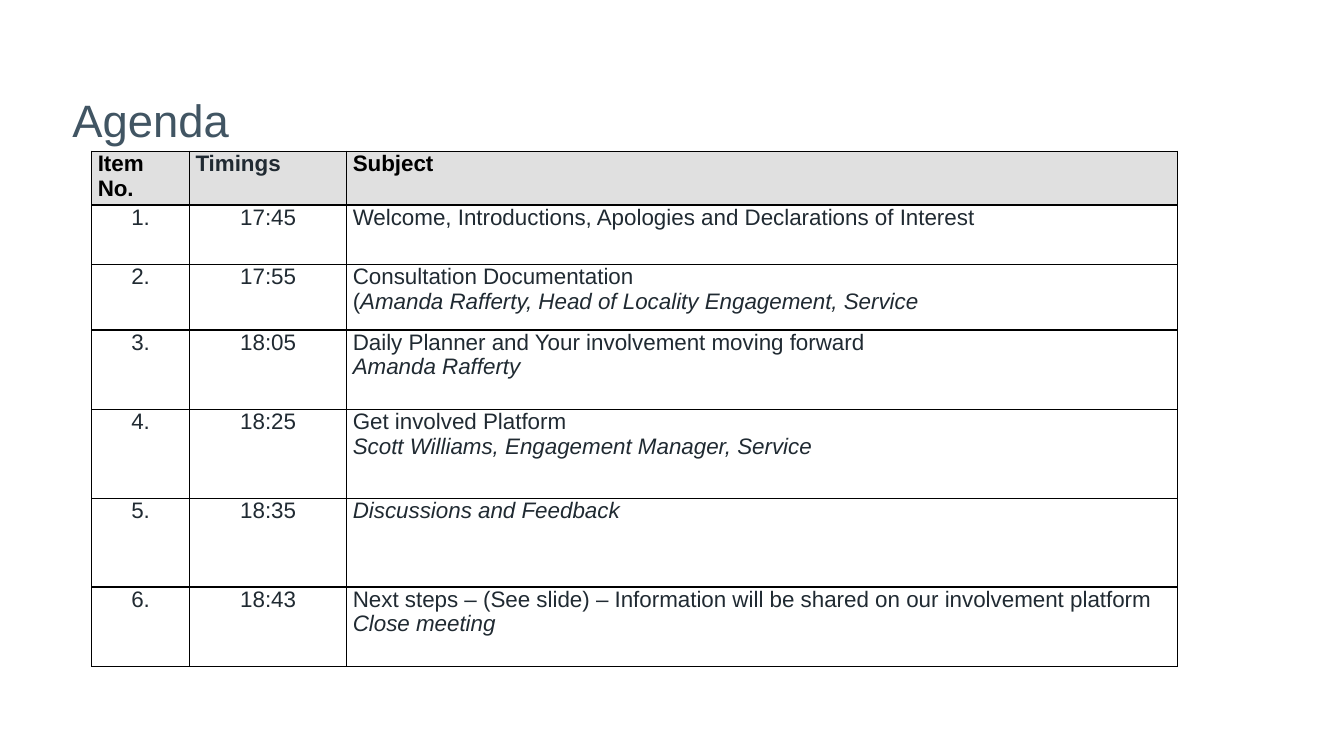
from dataclasses import dataclass

from lxml import etree
from pptx import Presentation
from pptx.dml.color import RGBColor
from pptx.enum.text import MSO_ANCHOR, PP_ALIGN
from pptx.oxml.ns import qn
from pptx.util import Pt

LEFT, CENTER = PP_ALIGN.LEFT, PP_ALIGN.CENTER
TOP, MIDDLE = MSO_ANCHOR.TOP, MSO_ANCHOR.MIDDLE
SCALE = 9144  # EMU per px, 100 px to the inch


@dataclass(frozen=True)
class Theme:
    font: str = "Arial"
    title: str = "415563"
    ink: str = "202A32"
    black: str = "000000"
    head: str = "E0E0E0"
    title_size: float = 32.4
    body_size: float = 16
    rule: float = 1


def px(n):
    return n * SCALE


class Deck:
    def __init__(self, theme, width, height):
        self.theme = theme
        self.prs = Presentation()
        self.prs.slide_width, self.prs.slide_height = px(width), px(height)
        self.slide = self.prs.slides.add_slide(self.prs.slide_layouts[6])

    def style(self, para, size, color, bold=False, align=LEFT):
        para.alignment = align
        font = para.font
        font.name, font.size, font.bold = self.theme.font, Pt(size), bold
        font.color.rgb = RGBColor.from_string(color)

    def title(self, text, x, y, w, h):
        box = self.slide.shapes.add_textbox(px(x), px(y), px(w), px(h))
        frame = box.text_frame
        frame.word_wrap = True
        frame.vertical_anchor = MIDDLE
        para = frame.paragraphs[0]
        para.text = text
        para.line_spacing = 0.9
        self.style(para, self.theme.title_size, self.theme.title)

    def border(self, cell):
        props = cell._tc.get_or_add_tcPr()
        for spot, side in enumerate(("lnL", "lnR", "lnT", "lnB")):
            line = etree.Element(qn("a:" + side), w=str(Pt(self.theme.rule)))
            fill = etree.SubElement(line, qn("a:solidFill"))
            etree.SubElement(fill, qn("a:srgbClr"), val=self.theme.black)
            props.insert(spot, line)

    def cell(self, cell, lines, color, align=LEFT, bold=False, fill=None):
        """Each line is a pair: upright text, then italic text."""
        cell.margin_left = cell.margin_right = px(6)
        cell.margin_top = cell.margin_bottom = 0
        cell.vertical_anchor = TOP
        if fill:
            cell.fill.solid()
            cell.fill.fore_color.rgb = RGBColor.from_string(fill)
        else:
            cell.fill.background()
        self.border(cell)
        frame = cell.text_frame
        for i, line in enumerate(lines):
            para = frame.add_paragraph() if i else frame.paragraphs[0]
            self.style(para, self.theme.body_size, color, bold, align)
            for text, slant in zip(line, (False, True)):
                if text:
                    run = para.add_run()
                    run.text = text
                    run.font.italic = slant

    def table(self, x, y, widths, heights, heads, items):
        frame = self.slide.shapes.add_table(
            len(heights), len(widths), px(x), px(y),
            px(sum(widths)), px(sum(heights)))
        table = frame.table
        table.first_row = table.horz_banding = False
        for col, width in zip(table.columns, widths):
            col.width = px(width)
        for row, height in zip(table.rows, heights):
            row.height = px(height)
        # Header row
        for c, (text, color) in enumerate(heads):
            self.cell(table.cell(0, c), [(text, "")], color,
                      bold=True, fill=self.theme.head)
        # Numbered items
        for r, (time, lines) in enumerate(items, 1):
            for c, text in enumerate((f"{r}.", time)):
                self.cell(table.cell(r, c), [(text, "")], self.theme.ink, CENTER)
            self.cell(table.cell(r, 2), lines, self.theme.ink)


def main():
    theme = Theme()
    deck = Deck(theme, 1333, 750)

    # Title
    deck.title("Agenda", 62, 93, 944, 57)

    # Agenda table
    heads = [("Item No.", theme.black), ("Timings", theme.ink),
             ("Subject", theme.black)]
    items = [
        ("17:45", [("Welcome, Introductions, Apologies and Declarations of Interest", "")]),
        ("17:55", [("Consultation Documentation", ""),
                   ("(", "Amanda Rafferty, Head of Locality Engagement, Service")]),
        ("18:05", [("Daily Planner and Your involvement moving forward", ""),
                   ("", "Amanda Rafferty")]),
        ("18:25", [("Get involved Platform", ""),
                   ("", "Scott Williams, Engagement Manager, Service")]),
        ("18:35", [("", "Discussions and Feedback")]),
        ("18:43", [("Next steps – (See slide) – Information will be shared "
                    "on our involvement platform", ""),
                   ("", "Close meeting")]),
    ]
    deck.table(91, 150, [97, 156, 824], [53, 59, 65, 79, 88, 88, 79], heads, items)

    deck.prs.save("out.pptx")


if __name__ == "__main__":
    main()
